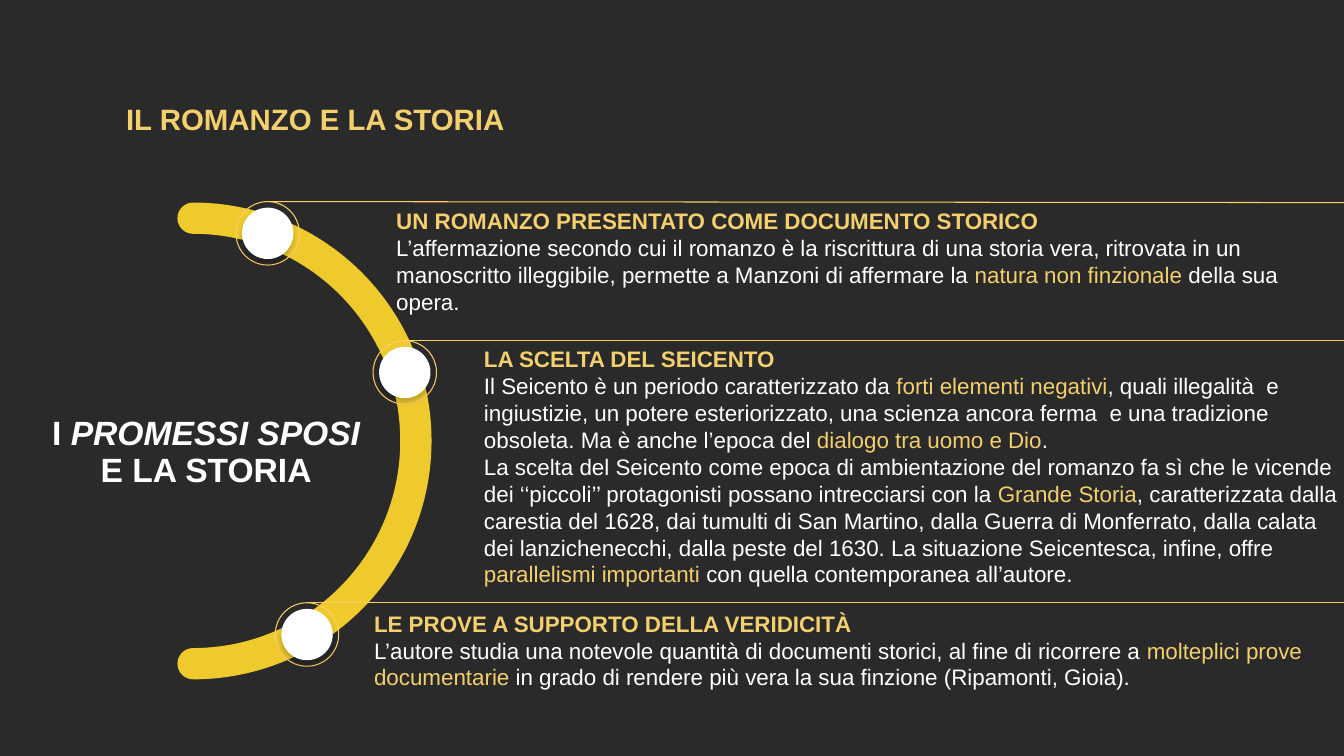
from math import cos, pi, sin, tan

from lxml import etree
from pptx import Presentation
from pptx.dml.color import RGBColor
from pptx.enum.shapes import MSO_CONNECTOR, MSO_SHAPE
from pptx.enum.text import MSO_ANCHOR, MSO_AUTO_SIZE, PP_ALIGN
from pptx.oxml.ns import qn
from pptx.util import Inches, Pt

STRAIGHT = MSO_CONNECTOR.STRAIGHT
OVAL = MSO_SHAPE.OVAL
TOP, MIDDLE = MSO_ANCHOR.TOP, MSO_ANCHOR.MIDDLE
LEFT, CENTER = PP_ALIGN.LEFT, PP_ALIGN.CENTER
NO_AUTOFIT, GROW = MSO_AUTO_SIZE.NONE, MSO_AUTO_SIZE.SHAPE_TO_FIT_TEXT

COLORS = {
    "background": "2A2A2A",
    "heading": "F3CF6D",
    "arc": "EFCA2D",
    "line": "FFCC66",
    "text": "FFFFFF",
    "shadow": "000000",
}
FONT = "Arial"
PAGE_WIDTH, PAGE_HEIGHT = 13.33, 7.5
RING, DOT = 0.63, 0.51

TOPICS = [
    ((2.34, 2), 2.01, (3.88, 2.01, 9.45, 1.18),
     "UN ROMANZO PRESENTATO COME DOCUMENTO STORICO",
     [["L’affermazione secondo cui il romanzo è la riscrittura di una storia vera, "
       "ritrovata in un manoscritto illeggibile, permette a Manzoni di affermare la ",
       "natura non finzionale ", "della sua opera."]]),
    ((3.7, 3.38), 3.38, (4.75, 3.38, 8.58, 2.53),
     "LA SCELTA DEL SEICENTO",
     [["Il Seicento è un periodo caratterizzato da ", "forti elementi negativi",
       ", quali illegalità  e ingiustizie, un potere esteriorizzato, una scienza "
       "ancora ferma  e una tradizione obsoleta. Ma è anche l’epoca del ",
       "dialogo tra uomo e Dio", "."],
      ["La scelta del Seicento come epoca di ambientazione del romanzo fa sì che le "
       "vicende dei ‘‘piccoli’’ protagonisti possano intrecciarsi con la ",
       "Grande Storia",
       ", caratterizzata dalla carestia del 1628, dai tumulti di San Martino, dalla "
       "Guerra di Monferrato, dalla calata dei lanzichenecchi, dalla peste del 1630. "
       "La situazione Seicentesca, infine, offre ",
       "parallelismi importanti ", "con quella contemporanea all’autore."]]),
    ((2.73, 5.98), 5.98, (3.66, 6, 9.45, 0.91),
     "LE PROVE A SUPPORTO DELLA VERIDICITÀ",
     [["L’autore studia una notevole quantità di documenti storici, al fine di "
       "ricorrere a ", "molteplici prove documentarie",
       " in grado di rendere più vera la sua finzione (Ripamonti, Gioia)."]]),
]


def color(name):
    return RGBColor.from_string(COLORS[name])


def inches(values):
    return [Inches(value) for value in values]


def set_font(paragraph, size, bold, name=None):
    font = paragraph.font
    font.name, font.size, font.bold = FONT, Pt(size), bold
    if name:
        font.color.rgb = color(name)


def format_frame(frame, fit, anchor, horizontal, vertical):
    frame.word_wrap = True
    frame.auto_size = fit
    frame.vertical_anchor = anchor
    frame.margin_left = frame.margin_right = Inches(horizontal)
    frame.margin_top = frame.margin_bottom = Inches(vertical)


def add_title(page, box):
    title = page.shapes.title
    title.left, title.top, title.width, title.height = inches(box)
    format_frame(title.text_frame, NO_AUTOFIT, TOP, 0.1, 0.05)
    paragraph = title.text_frame.paragraphs[0]
    paragraph.text = "IL ROMANZO E LA STORIA"
    paragraph.alignment = LEFT
    paragraph.line_spacing = 0.9
    set_font(paragraph, 21, True, "heading")


def add_subject(page, box):
    frame = page.shapes.add_textbox(*inches(box)).text_frame
    format_frame(frame, GROW, MIDDLE, 0, 0)
    paragraph = frame.paragraphs[0]
    paragraph.alignment = CENTER
    paragraph.line_spacing = 0.9
    set_font(paragraph, 24, True, "text")
    for text, italic in (("I ", False), ("PROMESSI SPOSI ", True), ("E LA STORIA", False)):
        span = paragraph.add_run()
        span.text = text
        span.font.italic = italic


def quarter_curve(center, radius, start, turn):
    x, y = center
    end = start + turn
    reach = 4 / 3 * tan(turn / 4)
    return [
        (x + radius * (cos(start) - reach * sin(start)),
         y + radius * (sin(start) + reach * cos(start))),
        (x + radius * (cos(end) + reach * sin(end)),
         y + radius * (sin(end) - reach * cos(end))),
        (x + radius * cos(end), y + radius * sin(end)),
    ]


def half_circle(center, radius, start, turn):
    return (quarter_curve(center, radius, start, turn)
            + quarter_curve(center, radius, start + turn, turn))


def bend_segments(shape):
    segments = list(shape._element.spPr.iter(qn("a:lnTo")))
    for first in range(0, len(segments), 3):
        curve = etree.Element(qn("a:cubicBezTo"))
        segments[first].addprevious(curve)
        for segment in segments[first:first + 3]:
            curve.append(segment[0])
            segment.getparent().remove(segment)


def add_arc(page, box):
    left, top, width, height = box
    thickness = 0.31
    cap, outer = thickness / 2, height / 2
    x, y = left + cap, top + outer
    points = (
        half_circle((x, y), outer, pi / 2, -pi / 2)
        + half_circle((x, top + cap), cap, -pi / 2, -pi / 2)
        + half_circle((x, y), outer - thickness, -pi / 2, pi / 2)
        + half_circle((x, top + height - cap), cap, -pi / 2, -pi / 2)
    )
    builder = page.shapes.build_freeform(*inches(points[-1]), scale=1.0)
    builder.add_line_segments([inches(point) for point in points], close=True)
    arc = builder.convert_to_shape()
    bend_segments(arc)
    arc.shadow.inherit = False
    arc.fill.solid()
    arc.fill.fore_color.rgb = color("arc")
    arc.line.fill.background()


def add_circle(page, left, top, diameter):
    circle = page.shapes.add_shape(OVAL, *inches((left, top, diameter, diameter)))
    circle.shadow.inherit = False
    return circle


def add_shadow(shape):
    effects = shape._element.spPr.find(qn("a:effectLst"))
    shadow = etree.SubElement(
        effects, qn("a:outerShdw"), blurRad=str(Pt(4)), dist=str(Pt(3)),
        dir="5400000", algn="t", rotWithShape="0")
    tint = etree.SubElement(shadow, qn("a:srgbClr"), val=COLORS["shadow"])
    etree.SubElement(tint, qn("a:alpha"), val="20000")


def add_marker(page, left, top):
    ring = add_circle(page, left, top, RING)
    ring.fill.background()
    ring.line.color.rgb = color("line")
    ring.line.width = Pt(0.75)
    inset = (RING - DOT) / 2
    dot = add_circle(page, left + inset, top + inset, DOT)
    dot.fill.solid()
    dot.fill.fore_color.rgb = color("text")
    dot.line.fill.background()
    add_shadow(dot)


def add_rule(page, left, top, end):
    ends = inches((left + RING / 2, top, PAGE_WIDTH, end))
    rule = page.shapes.add_connector(STRAIGHT, *ends)
    rule.line.color.rgb = color("line")
    rule.line.width = Pt(0.75)
    etree.SubElement(rule._element.spPr, qn("a:effectLst"))


def add_topic(page, marker, rule_end, box, heading, passages):
    add_marker(page, *marker)
    frame = page.shapes.add_textbox(*inches(box)).text_frame
    format_frame(frame, GROW, TOP, 0.05, 0.05)
    first = frame.paragraphs[0]
    first.text = heading
    set_font(first, 16, True, "heading")
    for passage in passages:
        paragraph = frame.add_paragraph()
        set_font(paragraph, 16, False)
        for index, text in enumerate(passage):
            span = paragraph.add_run()
            span.text = text
            span.font.color.rgb = color("heading" if index % 2 else "text")
    add_rule(page, *marker, rule_end)


def main():
    deck = Presentation()
    deck.slide_width, deck.slide_height = inches((PAGE_WIDTH, PAGE_HEIGHT))
    page = deck.slides.add_slide(deck.slide_layouts.get_by_name("Title Only"))
    page.background.fill.solid()
    page.background.fill.fore_color.rgb = color("background")
    add_title(page, (1.15, 0.99, 11.02, 0.42))
    add_subject(page, (0.42, 4.13, 3.25, 0.73))
    add_arc(page, (1.76, 2.01, 2.52, 4.73))
    for topic in TOPICS:
        add_topic(page, *topic)
    deck.save("out.pptx")


if __name__ == "__main__":
    main()
